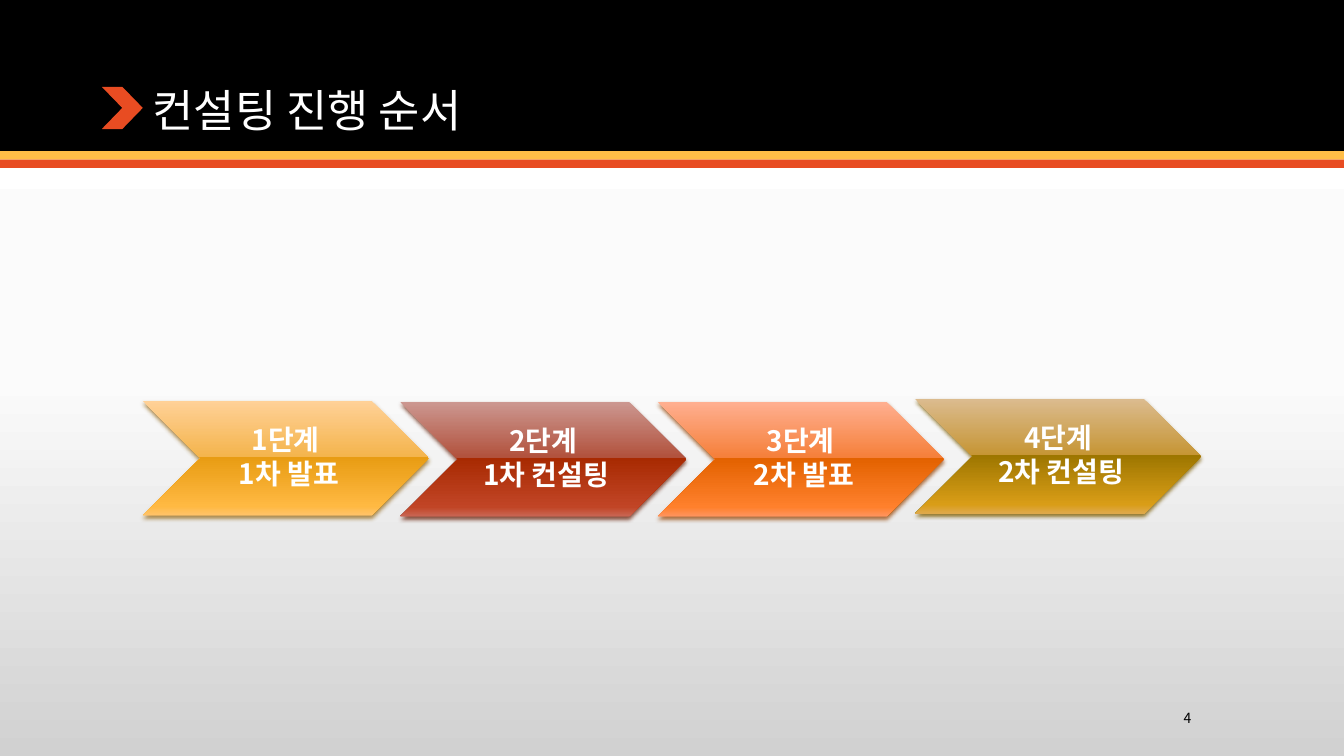
"""Build the slide on the four steps of the consulting process."""
import pptx
import pptx.dml.color
import pptx.enum.shapes
import pptx.enum.text
import pptx.oxml
import pptx.oxml.ns
import pptx.util
from lxml import etree

Pt = pptx.util.Pt
RGBColor = pptx.dml.color.RGBColor
SHAPE = pptx.enum.shapes.MSO_SHAPE
ALIGN = pptx.enum.text.PP_ALIGN
ANCHOR = pptx.enum.text.MSO_ANCHOR
qn = pptx.oxml.ns.qn

FONT = "Noto Sans CJK KR"
BLACK = RGBColor(0x00, 0x00, 0x00)
WHITE = RGBColor(0xFF, 0xFF, 0xFF)
YELLOW = RGBColor(0xFF, 0xBD, 0x47)
ORANGE = RGBColor(0xE8, 0x4C, 0x22)


def set_gradient(fill, element, stops):
    """Fill from top to bottom with (percent, colour) stops."""
    fill.gradient()
    fill.gradient_angle = 270
    stop_list = element.find(".//" + qn("a:gsLst"))
    for old_stop in list(stop_list):
        stop_list.remove(old_stop)
    for percent, colour in stops:
        stop = etree.SubElement(stop_list, qn("a:gs"), pos=str(percent * 1000))
        etree.SubElement(stop, qn("a:srgbClr"), val=str(colour))


def write(frame, lines, size, colour, align, anchor, bold=False, spacing=None, after=0):
    """Write one paragraph per line in the slide's font."""
    frame.word_wrap = True
    frame.vertical_anchor = anchor
    frame.text = "\n".join(lines)
    for paragraph in frame.paragraphs:
        paragraph.alignment = align
        paragraph.line_spacing = spacing
        paragraph.space_after = Pt(after)
        font = paragraph.font
        font.size, font.bold, font.name = Pt(size), bold, FONT
        font.color.rgb = colour
        properties = paragraph._p.find(".//" + qn("a:defRPr"))
        etree.SubElement(properties, qn("a:ea"), typeface=FONT)


deck = pptx.Presentation()
deck.slide_width, deck.slide_height = Pt(960), Pt(540)
slide = deck.slides.add_slide(deck.slide_layouts[6])
shapes = slide.shapes

set_gradient(slide.background.fill, slide.element, [
    (0, WHITE),
    (50, RGBColor(0xFB, 0xFB, 0xFB)),
    (100, RGBColor(0xD1, 0xD1, 0xD1)),
])

for preset, left, top, width, height, colour in [
    (SHAPE.RECTANGLE, 0, 0, 960, 108, BLACK),
    (SHAPE.RECTANGLE, 0, 108, 960, 6, YELLOW),
    (SHAPE.RECTANGLE, 0, 114, 960, 6, ORANGE),
    (SHAPE.CHEVRON, 72.7, 62, 29.3, 30.2, ORANGE),
]:
    header_part = shapes.add_shape(preset, Pt(left), Pt(top), Pt(width), Pt(height))
    header_part.shadow.inherit = False
    header_part.fill.solid()
    header_part.fill.fore_color.rgb = colour
    header_part.line.fill.background()

title = shapes.add_textbox(Pt(102), Pt(20.2), Pt(756), Pt(81.4))
write(title.text_frame, ["컨설팅 진행 순서"], 32, WHITE, ALIGN.LEFT, ANCHOR.BOTTOM, spacing=0.9)

STEP_LEFT, STEP_PITCH = 102.1, 183.9
STOP_PERCENTS = [0, 49, 49, 92, 100]
steps = [
    (286.5, ["1단계 ", "1차 발표"], "9D752C", "FFD197 F4B44C E89C13 FFB942 FFC36A"),
    (287.2, ["2단계 ", "1차 컨설팅"], "702D17", "CC9790 B1513C A82A02 C14526 C96654"),
    (287.2, ["3단계 ", "2차 발표"], "9D5218", "FFAF90 F57F39 E36200 FF802C FF945E"),
    (285.2, ["4단계 ", "2차 컨설팅"], "7E5E00", "DBBB8E C69534 9D7600 D99D17 DFA94C"),
]
for number, (top, lines, shadow_colour, colours) in enumerate(steps):
    step = shapes.add_shape(
        SHAPE.CHEVRON, Pt(STEP_LEFT + number * STEP_PITCH), Pt(top), Pt(204.3), Pt(81.7))
    step.line.fill.background()
    stop_colours = [RGBColor.from_string(colour) for colour in colours.split()]
    set_gradient(step.fill, step.element, zip(STOP_PERCENTS, stop_colours))

    step.shadow.inherit = False
    effects = step.element.spPr.find(qn("a:effectLst"))
    shadow = etree.SubElement(
        effects, qn("a:outerShdw"), blurRad=str(Pt(3.1)), dist=str(Pt(2)),
        dir="5400000", algn="ctr", rotWithShape="0")
    shade = etree.SubElement(shadow, qn("a:srgbClr"), val=shadow_colour)
    etree.SubElement(shade, qn("a:alpha"), val="83000")

    frame = step.text_frame
    frame.margin_left = Pt(6.3)
    frame.margin_right = frame.margin_top = frame.margin_bottom = Pt(2.1)
    write(frame, lines, 20, WHITE, ALIGN.CENTER, ANCHOR.MIDDLE, bold=True, spacing=0.9, after=2.5)

page_number = shapes.add_textbox(Pt(750), Pt(502), Pt(108), Pt(21.6))
write(page_number.text_frame, ["4"], 10, BLACK, ALIGN.RIGHT, ANCHOR.MIDDLE)

deck.save("out.pptx")
